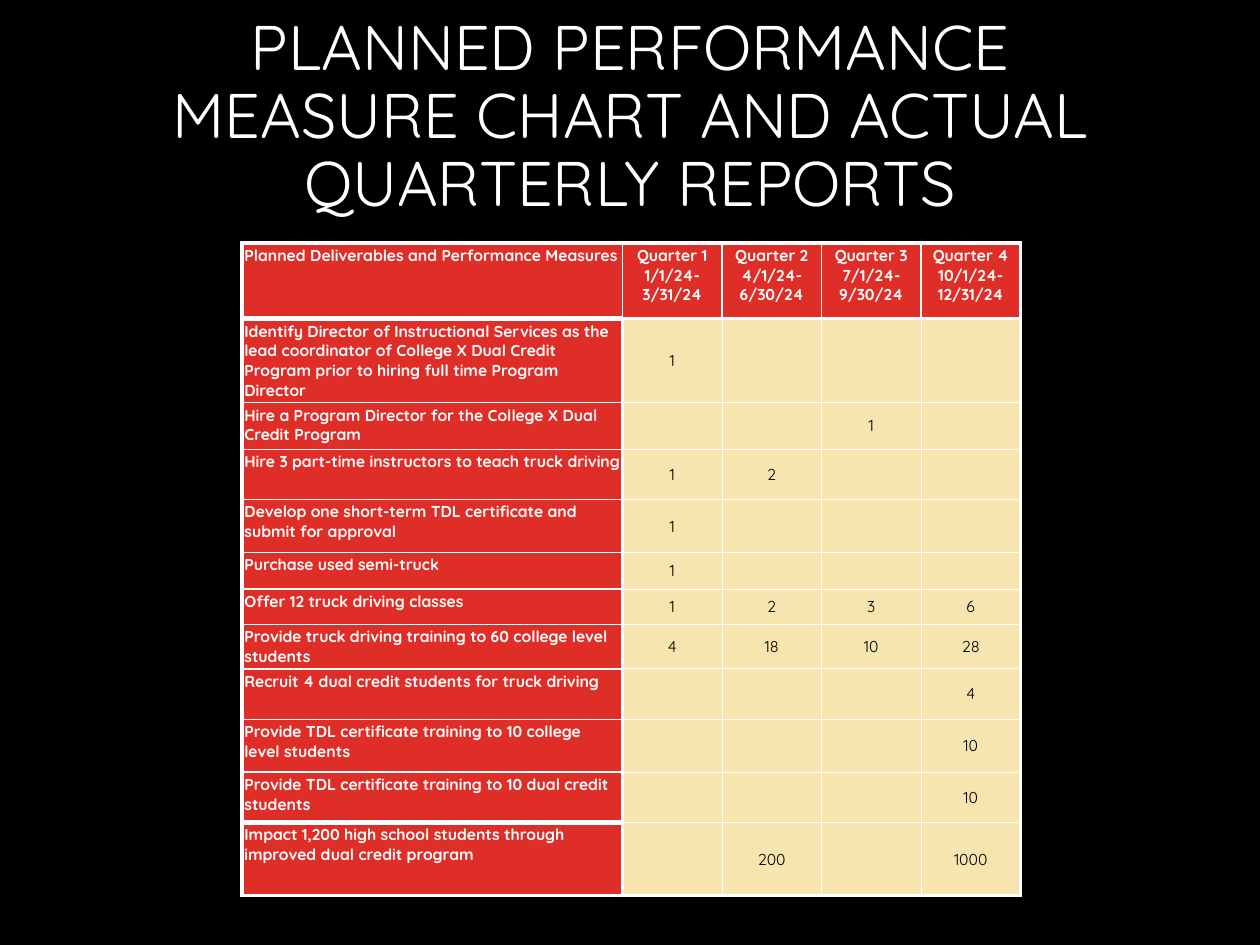
"""Build the slide of planned quarterly performance measures."""
from dataclasses import dataclass

from lxml.etree import SubElement
from pptx import Presentation
from pptx.dml.color import RGBColor
from pptx.enum.text import MSO_ANCHOR, MSO_AUTO_SIZE, PP_ALIGN
from pptx.oxml.ns import qn
from pptx.util import Inches, Pt


@dataclass(frozen=True)
class Theme:
    font: str = "Quicksand"
    title_size: float = 36
    table_size: float = 9
    background: str = "000000"
    light: str = "FFFFFF"
    dark: str = "000000"
    heading: str = "DF2E28"
    body: str = "F6E5AE"
    hairline: float = 0.5
    thin: float = 1
    thick: float = 2.25
    heavy: float = 3


TITLE = "PLANNED PERFORMANCE MEASURE CHART AND ACTUAL QUARTERLY REPORTS"
HEADINGS = [
    "Planned Deliverables and Performance Measures",
    "Quarter 1\n1/1/24-3/31/24",
    "Quarter 2\n4/1/24-6/30/24",
    "Quarter 3\n7/1/24-9/30/24",
    "Quarter 4\n10/1/24-12/31/24",
]
MEASURES = [
    ("Identify Director of Instructional Services as the lead coordinator of College X "
     "Dual Credit Program prior to hiring full time Program Director", "1", "", "", ""),
    ("Hire a Program Director for the College X Dual Credit Program", "", "", "1", ""),
    ("Hire 3 part-time instructors to teach truck driving", "1", "2", "", ""),
    ("Develop one short-term TDL certificate and submit for approval", "1", "", "", ""),
    ("Purchase used semi-truck", "1", "", "", ""),
    ("Offer 12 truck driving classes", "1", "2", "3", "6"),
    ("Provide truck driving training to 60 college level students", "4", "18", "10", "28"),
    ("Recruit 4 dual credit students for truck driving", "", "", "", "4"),
    ("Provide TDL certificate training to 10 college level students", "", "", "", "10"),
    ("Provide TDL certificate training to 10 dual credit students", "", "", "", "10"),
    ("Impact 1,200 high school students through improved dual credit program",
     "", "200", "", "1000"),
]
COLUMN_WIDTHS = [3.02] + [0.79] * 4
ROW_HEIGHTS = [0.6, 0.66, 0.37, 0.4, 0.42, 0.29, 0.28, 0.35, 0.4, 0.42, 0.4, 0.58]


def apply(target, values):
    """Set each named attribute of the target."""
    for name, value in values.items():
        setattr(target, name, value)


class SlideBuilder:
    """Hold the theme and the current slide."""

    def __init__(self, page, theme):
        self.page = page
        self.theme = theme
        fill = page.background.fill
        fill.solid()
        fill.fore_color.rgb = RGBColor.from_string(theme.background)

    def add_text(self, frame, text, size, color, bold, align):
        """Add each line of the text as one formatted paragraph."""
        for index, line in enumerate(text.split("\n")):
            para = frame.paragraphs[0] if index == 0 else frame.add_paragraph()
            para.alignment = align
            if line:
                span = para.add_run()
                span.text = line
                apply(span.font, {"name": self.theme.font, "size": Pt(size), "bold": bold})
                span.font.color.rgb = RGBColor.from_string(color)
            else:
                SubElement(para._p, qn("a:endParaRPr"), sz=str(int(size * 100)))

    def title(self, text, left, top, width, height):
        """Place and fill the title placeholder."""
        box = self.page.shapes.title
        apply(box, {"left": Inches(left), "top": Inches(top),
                    "width": Inches(width), "height": Inches(height)})
        frame = box.text_frame
        apply(frame, {"word_wrap": True, "auto_size": MSO_AUTO_SIZE.NONE,
                      "vertical_anchor": MSO_ANCHOR.MIDDLE})
        self.add_text(frame, text, self.theme.title_size, self.theme.light, False,
                      PP_ALIGN.CENTER)
        frame.paragraphs[0].line_spacing = 0.9

    def border_weights(self, row, column, last_row, last_column):
        """Give the left, right, top and bottom line weights of a cell."""
        theme = self.theme
        if row == 0:
            return (theme.thin if column else theme.thick,
                    theme.thick if column == last_column else theme.thin,
                    theme.thick,
                    theme.thick if column else theme.heavy)
        bottom = row == last_row
        if column == 0:
            return (theme.thick, theme.thick,
                    theme.heavy if bottom else theme.thin,
                    theme.thick if bottom else theme.thin)
        edges = (column == 1, column == last_column, row == 1, bottom)
        return tuple(theme.thick if edge else theme.hairline for edge in edges)

    def borders(self, cell, weights):
        """Draw the four lines around a cell."""
        properties = cell._tc.get_or_add_tcPr()
        for side, weight in zip("LRTB", weights):
            line = SubElement(properties, qn(f"a:ln{side}"), w=str(int(Pt(weight))))
            paint = SubElement(line, qn("a:solidFill"))
            SubElement(paint, qn("a:srgbClr"), val=self.theme.light)

    def table(self, rows, left, top, widths, heights):
        """Add a table whose first row and column are headings."""
        theme = self.theme
        grid = self.page.shapes.add_table(
            len(rows), len(widths), Inches(left), Inches(top),
            Inches(sum(widths)), Inches(sum(heights))).table
        for column, width in zip(grid.columns, widths):
            column.width = Inches(width)
        for row, height in zip(grid.rows, heights):
            row.height = Inches(height)
        margins = {f"margin_{side}": Inches(0.02)
                   for side in ("left", "right", "top", "bottom")}
        for row, texts in enumerate(rows):
            for column, text in enumerate(texts):
                cell = grid.cell(row, column)
                heading = row == 0 or column == 0
                anchor = MSO_ANCHOR.TOP if heading else MSO_ANCHOR.MIDDLE
                apply(cell, {**margins, "vertical_anchor": anchor})
                self.borders(cell, self.border_weights(
                    row, column, len(rows) - 1, len(widths) - 1))
                cell.fill.solid()
                cell.fill.fore_color.rgb = RGBColor.from_string(
                    theme.heading if heading else theme.body)
                self.add_text(cell.text_frame, text, theme.table_size,
                              theme.light if heading else theme.dark, heading,
                              PP_ALIGN.CENTER if column else PP_ALIGN.LEFT)


def main():
    deck = Presentation()
    apply(deck, {"slide_width": Inches(10), "slide_height": Inches(7.5)})
    page = deck.slides.add_slide(deck.slide_layouts.get_by_name("Title Only"))
    builder = SlideBuilder(page, Theme())
    builder.title(TITLE, 1.05, 0.22, 7.9, 1.44)
    builder.table([HEADINGS, *MEASURES], 1.92, 1.93, COLUMN_WIDTHS, ROW_HEIGHTS)
    deck.save("out.pptx")


if __name__ == "__main__":
    main()
